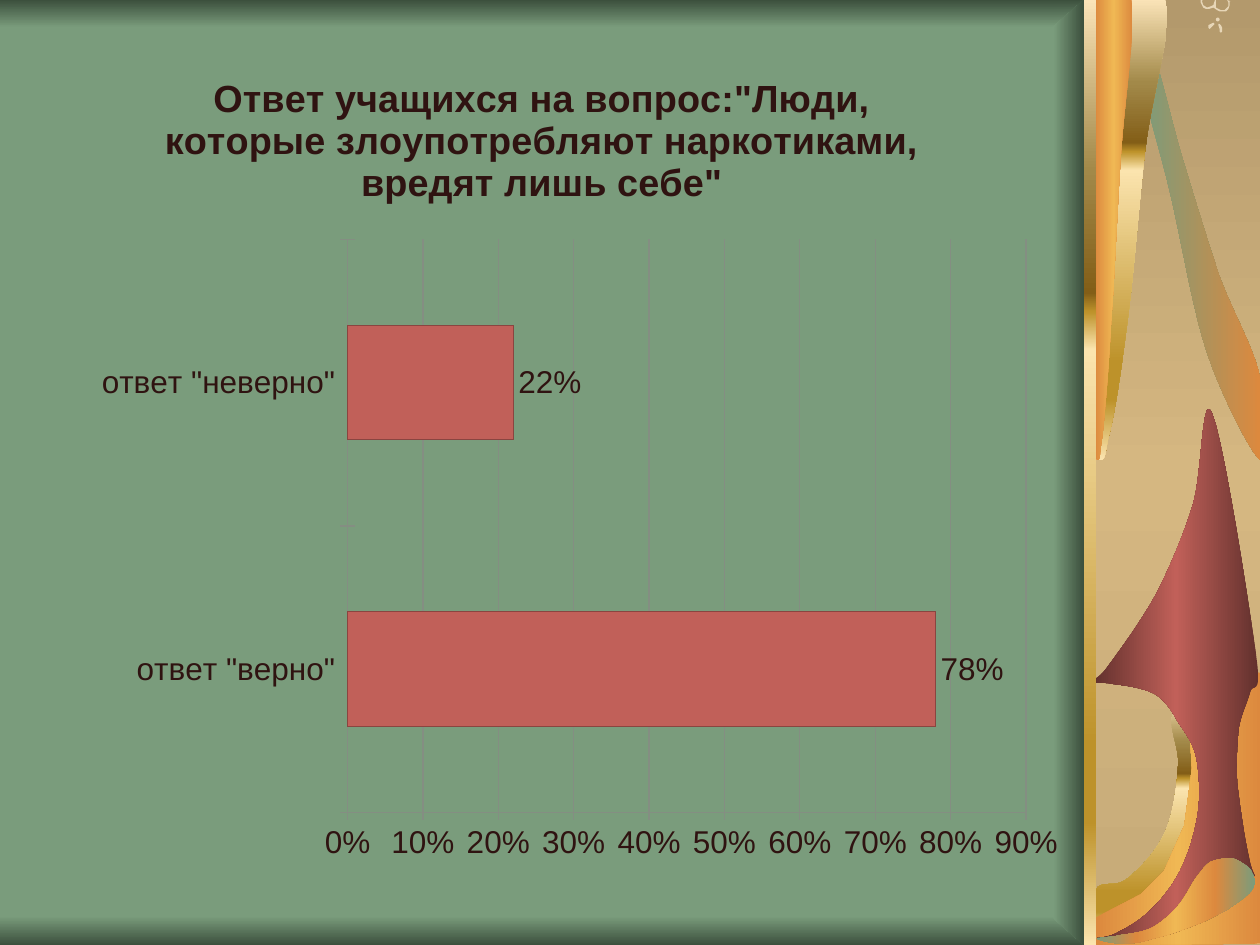
from lxml import etree
from pptx import Presentation
from pptx.chart.data import CategoryChartData
from pptx.dml.color import RGBColor
from pptx.enum.chart import XL_CHART_TYPE, XL_LABEL_POSITION, XL_TICK_MARK
from pptx.enum.shapes import MSO_SHAPE
from pptx.oxml.ns import qn
from pptx.util import Pt

PX = 9144
STEPS = 10
RECT, OVAL = MSO_SHAPE.RECTANGLE, MSO_SHAPE.OVAL
BAR = XL_CHART_TYPE.BAR_CLUSTERED
OUT_END = XL_LABEL_POSITION.OUTSIDE_END
CROSS = XL_TICK_MARK.CROSS

GREEN = RGBColor(0x7A, 0x9C, 0x7C)
SHADE = RGBColor(0x3C, 0x50, 0x3D)
SAND = RGBColor(0xC6, 0xAA, 0x78)
LIGHT = RGBColor(0xD5, 0xB7, 0x81)
CREAM = RGBColor(0xE7, 0xD6, 0xB7)
ORANGE = RGBColor(0xDC, 0x89, 0x3E)
AMBER = RGBColor(0xF0, 0xB8, 0x54)
RED = RGBColor(0xC1, 0x60, 0x59)
WINE = RGBColor(0x8A, 0x45, 0x40)
MAROON = RGBColor(0x62, 0x31, 0x2D)
GRID = RGBColor(0x84, 0x8E, 0x82)
INK = RGBColor(0x2F, 0x13, 0x11)
PALE = RGBColor(0xFA, 0xE3, 0xB7)
OLIVE = RGBColor(0xA2, 0x89, 0x49)
BROWN = RGBColor(0x83, 0x5E, 0x17)
BRASS = RGBColor(0xBD, 0x92, 0x2A)
GLOW = RGBColor(0xFB, 0xE4, 0xAE)

GOLD = [(0, PALE), (18, OLIVE), (31, BROWN), (33, BRASS),
        (37, GLOW), (79, BRASS), (87, BRASS), (100, GLOW)]
FIRE = [(0, ORANGE), (50, AMBER), (100, ORANGE)]
DUSK = [(0, GREEN), (100, SHADE)]
DAWN = [(0, SHADE), (100, GREEN)]

LOOPS = [(959, -4), (955, -6), (955, -4), (953, -1), (953, 2), (955, 6),
         (957, 7), (960, 7), (963, 6), (966, 8), (968, 9), (971, 9),
         (973, 9), (975, 7), (976, 4), (976, 1), (977, 1), (974, 0),
         (972, -1), (974, 0), (975, 2), (975, 5), (974, 6), (972, 8),
         (969, 8), (967, 7), (965, 6), (965, 4), (965, 0), (966, -2),
         (965, -2), (964, 1), (963, 4), (961, 5), (958, 6), (955, 4),
         (954, 1), (955, -1), (956, -3), (958, -4), (960, -4)]
LEAF = [(968, 23), (967, 20), (967, 19), (968, 19), (969, 20),
        (970, 22), (970, 25), (969, 26), (968, 25)]
BUD = [(962, 21), (961, 22), (960, 23), (959, 22), (959, 20),
       (961, 19), (963, 18), (964, 19), (963, 20)]
RING = [(934, 564), (923, 570, 937, 592, 935, 608),
        (934, 625, 931, 648, 924, 662), (917, 677, 903, 691, 894, 698),
        (885, 705, 874, 698, 870, 706), (870, 749), (1000, 749),
        (1000, 568), (989, 537, 948, 564, 934, 564)]
FLAME = [(870, 750), (870, 728), (905, 710), (924, 691), (940, 655),
         (946, 610), (944, 576), (987, 531), (1000, 534), (1000, 749)]
PETAL = [(962, 328), (954, 308, 954, 377, 947, 400),
         (940, 423, 930, 447, 919, 469), (908, 490, 889, 516, 880, 528),
         (872, 540, 867, 538, 868, 541), (868, 543, 876, 541, 884, 543),
         (893, 544, 908, 546, 917, 551), (925, 556, 930, 564, 935, 573),
         (941, 582, 948, 591, 950, 604), (952, 617, 953, 634, 950, 650),
         (947, 666, 941, 686, 931, 701), (921, 716, 908, 730, 889, 739),
         (878, 746, 869, 743, 871, 745), (873, 746, 890, 750, 901, 748),
         (912, 746, 926, 741, 934, 734), (943, 728, 948, 715, 954, 707),
         (960, 700, 965, 693, 971, 690), (976, 687, 983, 689, 988, 690),
         (992, 691, 995, 697, 996, 695), (996, 694, 993, 691, 991, 679),
         (988, 667, 984, 639, 982, 622), (981, 605, 982, 591, 983, 579),
         (985, 567, 989, 560, 992, 550), (994, 540, 1002, 556, 997, 520),
         (992, 484, 971, 348, 962, 328)]
BLADE = [(914, 40), (920, 51, 929, 94, 938, 124),
         (947, 154, 958, 190, 968, 220), (979, 249, 996, 278, 1000, 300),
         (1000, 365), (994, 361, 970, 316, 958, 280),
         (946, 244, 937, 187, 928, 150), (919, 113, 907, 76, 905, 58),
         (902, 40, 909, 29, 914, 40)]
HORN = [(869, 364), (878, 367, 876, 364, 880, 346),
        (885, 328, 890, 292, 895, 254), (900, 216, 904, 160, 909, 118),
        (914, 75, 932, 20, 925, 0), (869, 0)]
CORE = [(869, 364), (874, 367, 872, 364, 875, 346),
        (877, 328, 880, 292, 882, 254), (885, 216, 887, 160, 890, 118),
        (893, 76, 902, 20, 898, 0), (869, 0)]
FOOT = [(870, 745), (870, 744, 883, 744, 890, 742),
        (898, 741, 907, 740, 915, 736), (922, 732, 930, 725, 935, 719),
        (941, 712, 945, 703, 949, 697), (954, 691, 956, 687, 961, 684),
        (966, 682, 972, 681, 977, 681), (981, 682, 983, 683, 986, 685),
        (989, 687, 993, 689, 994, 693), (996, 696, 998, 701, 994, 706),
        (991, 711, 981, 717, 974, 722), (966, 726, 958, 731, 949, 734),
        (939, 738, 925, 743, 915, 745), (906, 748, 899, 749, 891, 749),
        (883, 749, 871, 746, 870, 745)]
BEVEL = [(860, 0), (836, 21), (836, 729), (860, 750)]


def paint(shape, look, angle=0):
    shape.shadow.inherit = False
    shape.line.fill.background()
    if isinstance(look, RGBColor):
        shape.fill.solid()
        shape.fill.fore_color.rgb = look
        return
    shape.fill.gradient()
    grad = shape._element.spPr.find(qn("a:gradFill"))
    stops = grad.find(qn("a:gsLst"))
    for old in list(stops):
        stops.remove(old)
    for pos, color in look:
        stop = etree.SubElement(stops, qn("a:gs"), pos=str(pos * 1000))
        etree.SubElement(stop, qn("a:srgbClr"), val=str(color))
    grad.find(qn("a:lin")).set("ang", str(angle * 60000))


def add_box(slide, kind, box, look, angle=0):
    shape = slide.shapes.add_shape(kind, *[v * PX for v in box])
    paint(shape, look, angle)


def trace(route):
    dots = [route[0]]
    for part in route[1:]:
        if len(part) == 2:
            dots.append(part)
            continue
        ends = [dots[-1], part[:2], part[2:4], part[4:]]
        for step in range(1, STEPS + 1):
            t = step / STEPS
            u = 1 - t
            mix = (u ** 3, 3 * u * u * t, 3 * u * t * t, t ** 3)
            dots.append(tuple(sum(m * e[axis] for m, e in zip(mix, ends))
                              for axis in (0, 1)))
    return [(round(x * PX), round(y * PX)) for x, y in dots]


def add_free(slide, route, look, angle=0):
    dots = trace(route)
    pen = slide.shapes.build_freeform(*dots[0])
    pen.add_line_segments(dots[1:], close=True)
    paint(pen.convert_to_shape(), look, angle)


def pin(part, **spots):
    layout = part.find(qn("c:layout"))
    if layout is None:
        layout = etree.Element(qn("c:layout"))
        part.insert(0, layout)
    manual = etree.SubElement(layout, qn("c:manualLayout"))
    if "w" in spots:
        etree.SubElement(manual, qn("c:layoutTarget"), val="inner")
    for side in "xy":
        etree.SubElement(manual, qn(f"c:{side}Mode"), val="edge")
    for key, val in spots.items():
        etree.SubElement(manual, qn(f"c:{key}"), val=str(val))


def set_font(font, size, bold=False):
    font.name, font.size, font.bold = "Arial", Pt(size), bold
    font.color.rgb = INK


def add_bars(slide):
    data = CategoryChartData(number_format="0%")
    data.categories = ['ответ "верно"', 'ответ "неверно"']
    data.add_series("Series 1", (0.78, 0.22))
    box = [v * PX for v in (62, 47, 792, 650)]
    chart = slide.shapes.add_chart(BAR, *box, data).chart
    set_font(chart.font, 18)
    chart.has_legend = False
    chart.has_title = True
    title = chart.chart_title
    line = title.text_frame.paragraphs[0]
    line.text = ('Ответ учащихся на вопрос:"Люди, которые злоупотребляют '
                 'наркотиками, вредят лишь себе"')
    set_font(line.font, 21.6, True)
    pin(title._element, x=0.08, y=0.01)
    pin(chart._chartSpace.chart.plotArea, x=0.27, y=0.22, w=0.68, h=0.7)

    scale = chart.value_axis
    scale.minimum_scale, scale.maximum_scale, scale.major_unit = 0, 0.9, 0.1
    scale.tick_labels.number_format = "0%"
    scale.tick_labels.number_format_is_linked = False
    scale.has_major_gridlines = True
    scale.major_gridlines.format.line.color.rgb = GRID
    for axis in (scale, chart.category_axis):
        axis.major_tick_mark = CROSS
        axis.format.line.color.rgb = GRID
        set_font(axis.tick_labels.font, 18)

    plot = chart.plots[0]
    plot.gap_width = 150
    plot.vary_by_categories = False
    look = plot.series[0].format
    look.fill.solid()
    look.fill.fore_color.rgb = RED
    look.line.color.rgb = WINE
    plot.has_data_labels = True
    labels = plot.data_labels
    labels.show_value = True
    labels.number_format = "0%"
    labels.number_format_is_linked = False
    labels.position = OUT_END
    set_font(labels.font, 18)


def main():
    deck = Presentation()
    deck.slide_width, deck.slide_height = 1000 * PX, 750 * PX
    slide = deck.slides.add_slide(deck.slide_layouts[6])
    back = slide.background.fill
    back.solid()
    back.fore_color.rgb = GREEN

    add_box(slide, RECT, (0, 727, 884, 23), DUSK, 90)
    add_box(slide, RECT, (0, 0, 884, 22), DAWN, 90)
    sand = [(0, RGBColor(0xB3, 0x99, 0x6C)), (50, LIGHT), (100, SAND)]
    add_box(slide, RECT, (870, 0, 130, 750), sand, 90)
    for route in (LOOPS, LEAF, BUD):
        add_free(slide, route, CREAM)
    add_box(slide, OVAL, (965, 14, 3, 3), CREAM)
    add_free(slide, RING, GOLD, 90)
    add_free(slide, FLAME, FIRE)
    add_free(slide, PETAL, [(0, MAROON), (50, RED), (100, MAROON)])
    add_free(slide, BLADE, [(0, GREEN), (100, ORANGE)])
    add_free(slide, HORN, GOLD, 90)
    add_free(slide, CORE, FIRE)
    add_box(slide, RECT, (860, 0, 10, 750), GOLD, 90)
    add_free(slide, FOOT, [(0, GREEN), (25, ORANGE), (50, AMBER),
                           (75, ORANGE), (100, GREEN)])
    add_free(slide, BEVEL, DUSK)
    add_bars(slide)
    deck.save("out.pptx")


if __name__ == "__main__":
    main()
